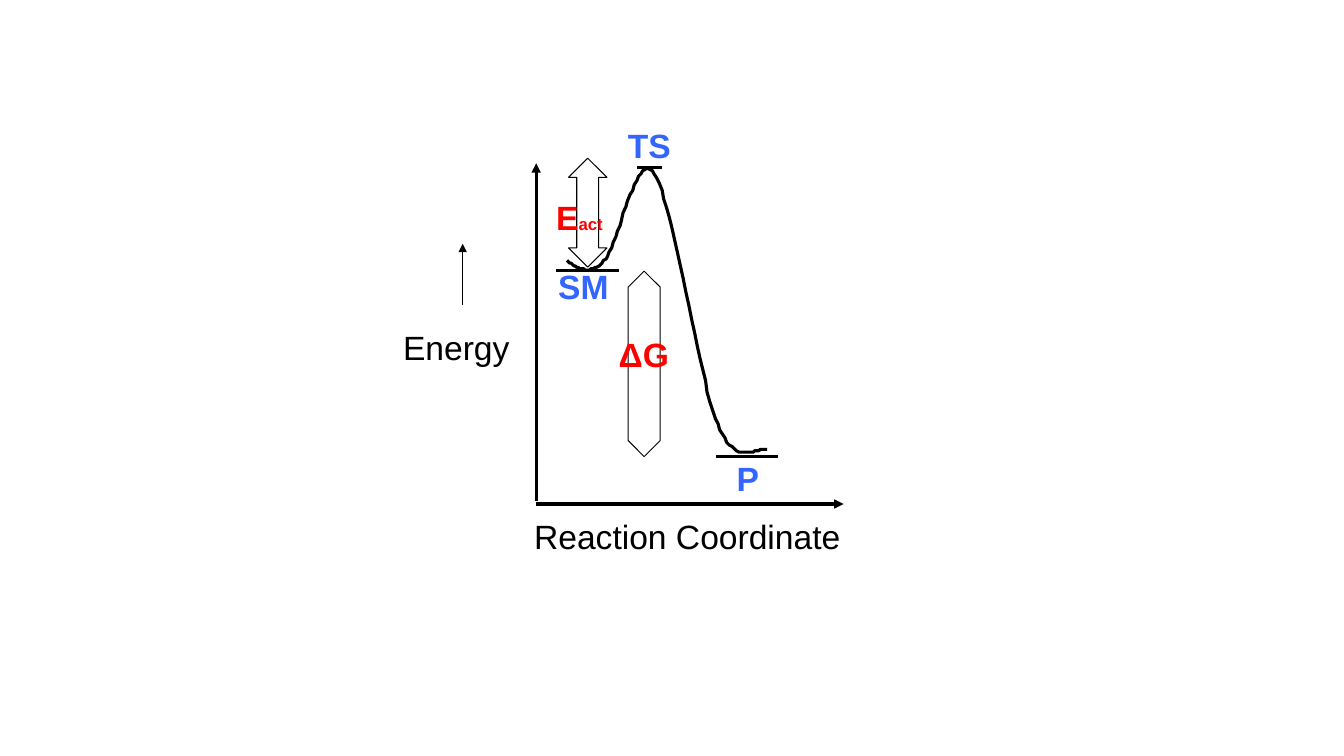
from lxml import etree
from pptx import Presentation
from pptx import util as u
from pptx.dml.color import RGBColor
from pptx.enum import shapes, text
from pptx.oxml.ns import qn

BLACK = RGBColor(0x00, 0x00, 0x00)
WHITE = RGBColor(0xFF, 0xFF, 0xFF)
BLUE = RGBColor(0x33, 0x66, 0xFF)
RED = RGBColor(0xFF, 0x00, 0x00)

THICK, THIN = 2.25, 0.75
AXIS_X, AXIS_Y = 383, 360
START_LEVEL, PEAK_LEVEL, PRODUCT_LEVEL = 193, 119.5, 326.2
CURVE_START = (404.6, 186.5)
CURVE_PIECES = [
    [(412.6, 191.5), (421.2, 197.3), (431.3, 186.5)],
    [(442.1, 175.7), (454.3, 103.7), (467.3, 123.8)],
    [(481, 143.3), (499, 270.7), (512.6, 303.1)],
    [(525.6, 336.2), (542.2, 318.2), (547.9, 321.1)],
]
STEPS = 24


def add_label(slide, box, runs, color, bold=True, backed=False):
    """Add left-aligned text made of (words, size) runs, on white if backed."""
    place = [u.Pt(length) for length in box]
    if backed:
        label = slide.shapes.add_shape(shapes.MSO_SHAPE.RECTANGLE, *place)
        label.shadow.inherit = False
        label.fill.solid()
        label.fill.fore_color.rgb = WHITE
        label.line.fill.background()
    else:
        label = slide.shapes.add_textbox(*place)
    frame = label.text_frame
    frame.word_wrap = True
    frame.vertical_anchor = text.MSO_ANCHOR.TOP
    frame.paragraphs[0].alignment = text.PP_ALIGN.LEFT
    for words, size in runs:
        run = frame.paragraphs[0].add_run()
        run.text = words
        run.font.color.rgb = color
        for key, value in {"name": "Arial", "size": u.Pt(size), "bold": bold}.items():
            setattr(run.font, key, value)


def add_line(slide, start, end, weight=THICK, arrow=False):
    """Add a straight black line, with an arrowhead at its end if asked."""
    line = slide.shapes.add_connector(
        shapes.MSO_CONNECTOR.STRAIGHT, *[u.Pt(length) for length in (*start, *end)])
    line.line.color.rgb = BLACK
    line.line.width = u.Pt(weight)
    if arrow:
        outline = line.line._get_or_add_ln()
        etree.SubElement(outline, qn("a:tailEnd"), type="triangle")
    etree.SubElement(line._element.spPr, qn("a:effectLst"))


def add_level(slide, left, right, level):
    """Add a horizontal energy level."""
    add_line(slide, (left, level), (right, level))


def add_gap_arrow(slide, box, head):
    """Add a white double arrow that spans an energy difference."""
    gap = slide.shapes.add_shape(
        shapes.MSO_SHAPE.UP_DOWN_ARROW, *[u.Pt(length) for length in box])
    gap.shadow.inherit = False
    gap.adjustments[0] = 0.5
    gap.adjustments[1] = head
    gap.fill.solid()
    gap.fill.fore_color.rgb = WHITE
    gap.line.color.rgb = BLACK
    gap.line.width = u.Pt(THIN)


def bezier_point(corners, t):
    """Return the point at t on a cubic curve."""
    weights = ((1 - t) ** 3, 3 * t * (1 - t) ** 2, 3 * t ** 2 * (1 - t), t ** 3)
    return tuple(sum(w * corner[axis] for w, corner in zip(weights, corners))
                 for axis in (0, 1))


def add_energy_curve(slide):
    """Add the smooth reaction profile from start material to product."""
    points, origin = [], CURVE_START
    for piece in CURVE_PIECES:
        points += [bezier_point([origin, *piece], step / STEPS)
                   for step in range(1, STEPS + 1)]
        origin = piece[-1]
    builder = slide.shapes.build_freeform(*CURVE_START, scale=u.Pt(1))
    builder.add_line_segments(points, close=False)
    profile = builder.convert_to_shape()
    profile.shadow.inherit = False
    profile.fill.background()
    profile.line.color.rgb = BLACK
    profile.line.width = u.Pt(THICK)


def main():
    """Build the reaction energy diagram."""
    deck = Presentation()
    deck.slide_width, deck.slide_height = u.Pt(960), u.Pt(540)
    slide = deck.slides.add_slide(deck.slide_layouts[6])

    add_label(slide, (441.4, 85.7, 45.6, 33), [("TS", 24)], BLUE, backed=True)
    add_line(slide, (AXIS_X, 358), (AXIS_X, 116.6), arrow=True)
    add_level(slide, 511.2, 556, PRODUCT_LEVEL)
    add_level(slide, 397.4, 442, START_LEVEL)
    add_level(slide, 455, 473, PEAK_LEVEL)
    add_energy_curve(slide)
    add_label(slide, (391.7, 186.5, 72, 72), [("SM", 24)], BLUE)
    add_label(slide, (519.1, 323.3, 26, 32.4), [("P", 24)], BLUE)
    add_line(slide, (AXIS_X, AXIS_Y), (602.6, AXIS_Y), arrow=True)

    add_gap_arrow(slide, (448.6, 193.7, 23, 132.5), 1.14)
    add_label(slide, (434.9, 234.7, 53.3, 36.7), [("ΔG", 24)], RED)
    add_gap_arrow(slide, (406.1, 113, 27.4, 77.8), 0.57)
    add_label(slide, (390.2, 136.8, 58.3, 31.7), [("E", 24), ("act", 12)], RED)

    add_label(slide, (280.8, 229.7, 106.6, 41), [("Energy", 24)], BLACK, bold=False)
    add_label(slide, (374.4, 365, 277.2, 36.7), [("Reaction Coordinate", 24)],
              BLACK, bold=False, backed=True)
    add_line(slide, (330.5, 218.2), (330.5, 174.2), weight=THIN, arrow=True)
    deck.save("out.pptx")


if __name__ == "__main__":
    main()
